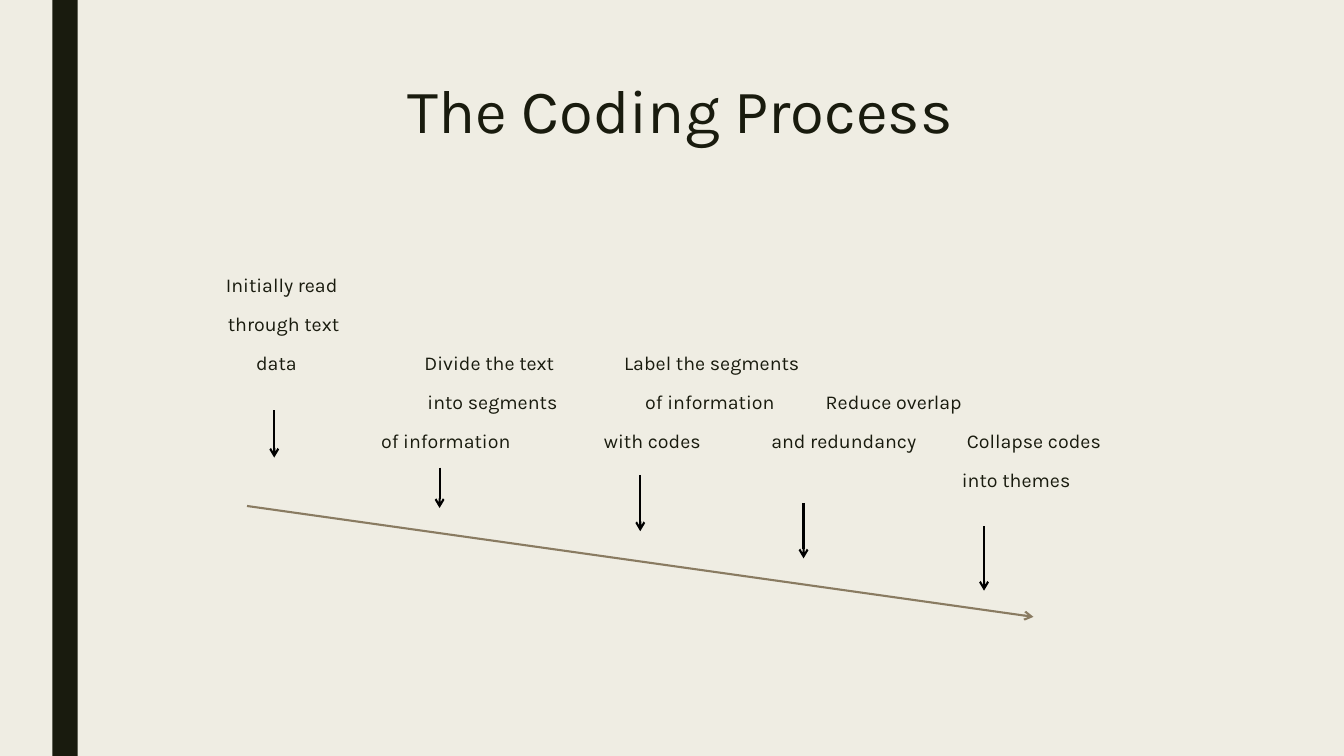
import pptx
import pptx.dml.color
import pptx.enum.shapes
import pptx.enum.text
import pptx.oxml.ns
import pptx.util
import lxml.etree

Inches = pptx.util.Inches
Pt = pptx.util.Pt

INK, PAPER, BROWN, BLACK = "191B0E", "EFEDE3", "897B61", "000000"
ROW_HEIGHT = 0.387

# Each step: left, first row, width, lines as (indent, text), arrow as (x, top, bottom)
STEPS = [
    (2.24, 0, 1.3, [(0, "Initially read"), (0.02, "through text"), (0.3, "data")],
     (2.72, 4.07, 4.54)),
    (3.78, 2, 1.9, [(0.43, "Divide the text"), (0.46, "into segments"),
                    (0, "of information")], (4.36, 4.64, 5.04)),
    (5.99, 2, 2.1, [(0.2, "Label the segments"), (0.41, "of information"),
                    (0, "with codes")], (6.35, 4.71, 5.27)),
    (7.65, 3, 2.0, [(0.54, "Reduce overlap"), (0, "and redundancy")],
     (7.97, 4.99, 5.54)),
    (9.54, 4, 1.5, [(0.05, "Collapse codes"), (0, "into themes")],
     (9.76, 5.22, 5.86)),
]


def color(hex_value):
    return pptx.dml.color.RGBColor.from_string(hex_value)


def apply(target, values):
    for name, value in values.items():
        setattr(target, name, value)


def write_line(paragraph, text, size, layout):
    apply(paragraph, layout)
    run = paragraph.add_run()
    run.text = text
    apply(run.font, {"name": "Karla", "size": Pt(size), "bold": False})
    run.font.color.rgb = color(INK)


def add_arrow(slide, start, end, hex_value):
    arrow = slide.shapes.add_connector(
        pptx.enum.shapes.MSO_CONNECTOR.STRAIGHT,
        *[Inches(value) for value in (*start, *end)])
    arrow.line.width = Pt(1.5)
    arrow.line.color.rgb = color(hex_value)
    qn = pptx.oxml.ns.qn
    outline = arrow.line._get_or_add_ln()
    lxml.etree.SubElement(outline, qn("a:tailEnd"), type="arrow")
    lxml.etree.SubElement(arrow._element.spPr, qn("a:effectLst"))


def add_sidebar(slide, left, top, width, height):
    sidebar = slide.shapes.add_shape(
        pptx.enum.shapes.MSO_SHAPE.RECTANGLE,
        Inches(left), Inches(top), Inches(width), Inches(height))
    sidebar.shadow.inherit = False
    sidebar.fill.solid()
    sidebar.fill.fore_color.rgb = color(INK)
    sidebar.line.fill.background()


def add_title(slide, left, top, width, height):
    title = slide.shapes.title
    apply(title, {"left": Inches(left), "top": Inches(top),
                  "width": Inches(width), "height": Inches(height)})
    apply(title.text_frame, {
        "word_wrap": True,
        "auto_size": pptx.enum.text.MSO_AUTO_SIZE.NONE,
        "vertical_anchor": pptx.enum.text.MSO_ANCHOR.TOP})
    write_line(title.text_frame.paragraphs[0], "The Coding Process", 44,
               {"alignment": pptx.enum.text.PP_ALIGN.CENTER, "line_spacing": 0.89})


def add_step(slide, left, top, width, lines):
    step = slide.shapes.add_textbox(
        Inches(left), Inches(top), Inches(width),
        Inches(len(lines) * ROW_HEIGHT))
    frame = step.text_frame
    apply(frame, {"word_wrap": True, "margin_left": 0, "margin_right": 0})
    for index, (indent, text) in enumerate(lines):
        paragraph = frame.add_paragraph() if index else frame.paragraphs[0]
        write_line(paragraph, text, 14, {
            "line_spacing": 0.94, "space_after": Pt(2),
            "space_before": Pt(10 if index else 0)})
        paragraph._p.get_or_add_pPr().set("marL", str(Inches(indent)))


def add_process(slide, top):
    # Step captions descend by whole text rows
    for left, row, width, lines, (x, arrow_top, arrow_bottom) in STEPS:
        add_step(slide, left, top + row * ROW_HEIGHT, width, lines)
        add_arrow(slide, (x, arrow_top), (x, arrow_bottom), BLACK)
    # Sloping timeline
    add_arrow(slide, (2.45, 5.02), (10.25, 6.12), BROWN)


def main():
    deck = pptx.Presentation()
    apply(deck, {"slide_width": Inches(13.33), "slide_height": Inches(7.5)})
    slide = deck.slides.add_slide(deck.slide_layouts[5])
    slide.background.fill.solid()
    slide.background.fill.fore_color.rgb = color(PAPER)

    add_sidebar(slide, 0.52, 0, 0.25, 7.5)
    add_title(slide, 1.5, 0.75, 10.5, 1.62)
    add_process(slide, 2.68)
    deck.save("out.pptx")


if __name__ == "__main__":
    main()
